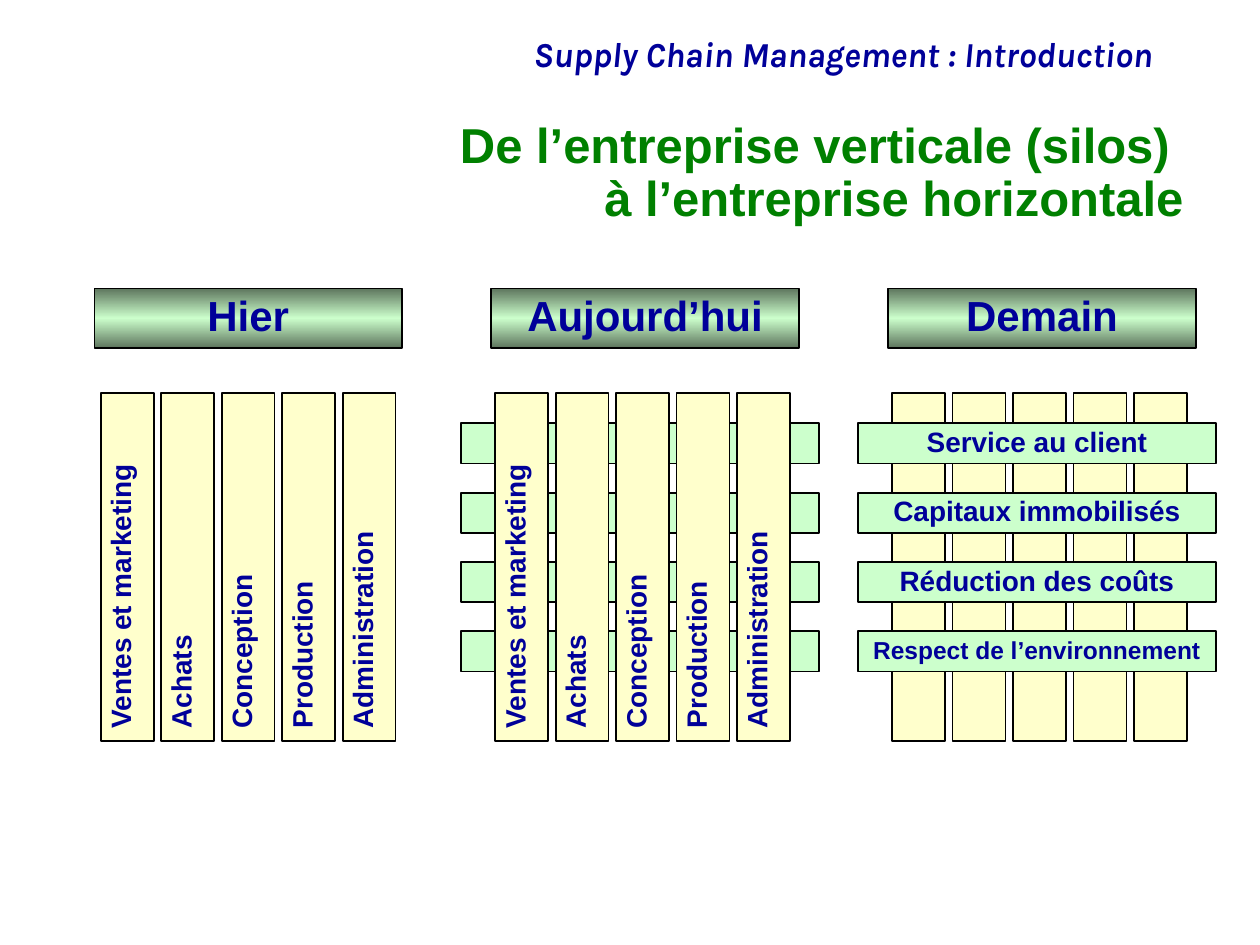
from copy import deepcopy

from pptx import Presentation
from pptx import util as u
from pptx.dml.color import RGBColor
from pptx.enum import shapes, text
from pptx.oxml.ns import qn

NAVY = RGBColor(0x00, 0x00, 0x99)
GREEN = RGBColor(0x00, 0x80, 0x00)
CREAM = RGBColor(0xFF, 0xFF, 0xCC)
MINT = RGBColor(0xCC, 0xFF, 0xCC)
MOSS = RGBColor(0x5E, 0x76, 0x5E)
BLACK = RGBColor(0x00, 0x00, 0x00)

SILOS = ["Ventes et marketing", "Achats", "Conception", "Production", "Administration"]
PROCESSES = [
    ("Service au client", 16),
    ("Capitaux immobilisés", 16),
    ("Réduction des coûts", 16),
    ("Respect de l’environnement", 14),
]
PERIODS = ["Hier", "Aujourd’hui", "Demain"]
PERIOD_PITCH = 3.15


def write(box, words, size=16, font="Arial", color=NAVY, italic=False,
          align=text.PP_ALIGN.CENTER, anchor=text.MSO_ANCHOR.MIDDLE, wrap=True):
    frame = box.text_frame
    frame.word_wrap = wrap
    frame.vertical_anchor = anchor
    para = frame.paragraphs[0]
    para.text = words
    para.alignment = align
    para.line_spacing = 0.9
    for span in para.runs:
        span.font.name = font
        span.font.size = u.Pt(size)
        span.font.bold = True
        span.font.italic = italic
        span.font.color.rgb = color


def add_textbox(page, left, top, width, height, words, **style):
    box = page.shapes.add_textbox(
        u.Inches(left), u.Inches(top), u.Inches(width), u.Inches(height))
    write(box, words, **style)


def add_bar(page, left, top, width, height, color):
    bar = page.shapes.add_shape(
        shapes.MSO_SHAPE.RECTANGLE,
        u.Inches(left), u.Inches(top), u.Inches(width), u.Inches(height))
    bar.shadow.inherit = False
    bar.fill.solid()
    bar.fill.fore_color.rgb = color
    bar.line.color.rgb = BLACK
    bar.line.width = u.Pt(1)
    return bar


def add_heading(page, left, words):
    heading = add_bar(page, left, 2.29, 2.44, 0.47, MINT)
    heading.fill.gradient()
    heading.fill.gradient_angle = 90
    # The default gradient has two stops; a third makes the bright middle
    stop_list = next(heading._element.spPr.iter(qn("a:gsLst")))
    stop_list.insert(1, deepcopy(stop_list[0]))
    for stop, position, color in zip(
            heading.fill.gradient_stops, (0, 0.5, 1), (MOSS, MINT, MOSS)):
        stop.position = position
        stop.color.rgb = color
    write(heading, words, size=24)


def add_silos(page, left, labelled=True):
    for index, label in enumerate(SILOS):
        silo = add_bar(page, left + index * 0.48, 3.12, 0.42, 2.76, CREAM)
        if labelled:
            write(silo, label, align=text.PP_ALIGN.LEFT,
                  anchor=text.MSO_ANCHOR.TOP, wrap=False)
            # Labels read from bottom to top
            silo.text_frame._txBody.bodyPr.set("vert", "vert270")


def add_processes(page, left, labelled=True):
    for index, (label, size) in enumerate(PROCESSES):
        process = add_bar(page, left, 3.36 + index * 0.55, 2.84, 0.32, MINT)
        if labelled:
            write(process, label, size=size, wrap=False)


def main():
    deck = Presentation()
    deck.slide_width = u.Inches(10)
    deck.slide_height = u.Inches(7.5)
    page = deck.slides.add_slide(deck.slide_layouts[6])

    # Running header and title
    add_textbox(page, 1.25, 0.25, 8, 0.4, "Supply Chain Management : Introduction",
                size=20, font="Karla", italic=True,
                align=text.PP_ALIGN.RIGHT, anchor=text.MSO_ANCHOR.TOP)
    add_textbox(page, 1.17, 0.91, 8.32, 0.94,
                "De l’entreprise verticale (silos) \và l’entreprise horizontale",
                size=28, color=GREEN, align=text.PP_ALIGN.RIGHT)

    # Period headings
    for index, period in enumerate(PERIODS):
        add_heading(page, 0.75 + index * PERIOD_PITCH, period)

    # Yesterday: silos only
    add_silos(page, 0.8)

    # Today: silos in front of the processes
    add_processes(page, 3.66, labelled=False)
    add_silos(page, 3.93)

    # Tomorrow: processes in front of the silos
    add_silos(page, 7.08, labelled=False)
    add_processes(page, 3.66 + PERIOD_PITCH)

    deck.save("out.pptx")


if __name__ == "__main__":
    main()
